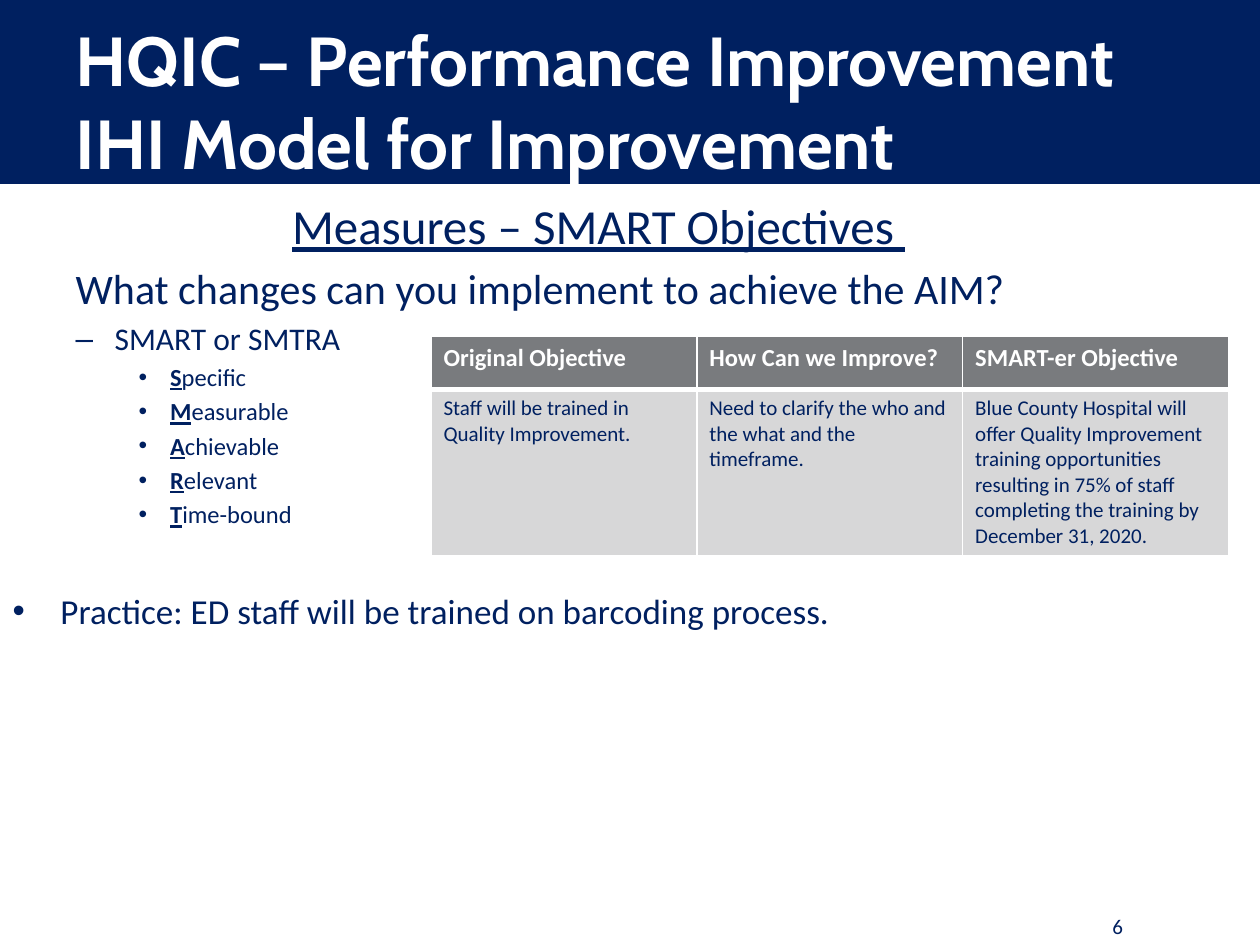
from dataclasses import dataclass

from lxml.etree import SubElement
from pptx import Presentation
from pptx.dml.color import RGBColor
from pptx.enum.shapes import MSO_SHAPE as Shape
from pptx.enum.text import MSO_ANCHOR as Anchor, MSO_AUTO_SIZE as AutoSize, PP_ALIGN as Align
from pptx.oxml import parse_xml
from pptx.oxml.ns import nsdecls, qn
from pptx.util import Inches, Pt


@dataclass(frozen=True)
class Theme:
    navy: RGBColor = RGBColor(0x00, 0x20, 0x60)
    white: RGBColor = RGBColor(0xFF, 0xFF, 0xFF)
    header_gray: RGBColor = RGBColor(0x79, 0x7B, 0x7E)
    row_gray: RGBColor = RGBColor(0xD7, 0xD7, 0xD8)
    title_font: str = "Cabin"
    text_font: str = "Calibri"
    title: float = 39.6
    heading: float = 28
    question: float = 24
    practice: float = 20
    method: float = 18
    small: float = 14
    tiny: float = 12


theme = Theme()


def write(paragraph, text, size, color=theme.navy, font=theme.text_font, bold=False,
          underline=False, align=Align.LEFT, level=0, margin=0, hanging=0, bullet=None,
          lead="", space_before=None):
    """Fill a paragraph; lead is an opening piece in bold underlined type."""
    paragraph.alignment = align
    paragraph.level = level
    properties = paragraph._p.get_or_add_pPr()
    properties.set("marL", str(Inches(margin)))
    properties.set("indent", str(Inches(-hanging)))
    if bullet:
        SubElement(properties, qn("a:buFont"), typeface="Arial")
        SubElement(properties, qn("a:buChar"), char=bullet)
    else:
        SubElement(properties, qn("a:buNone"))
    if space_before is not None:
        paragraph.space_before = Pt(space_before)
    for piece, emphasis in ((lead, True), (text, False)):
        if not piece:
            continue
        for number, line in enumerate(piece.split("\n")):
            if number:
                paragraph.add_line_break()
            run = paragraph.add_run()
            run.text = line
            run.font.name = font
            run.font.size = Pt(size)
            run.font.color.rgb = color
            run.font.bold = bold or emphasis
            run.font.underline = underline or emphasis


def set_borders(cell, **widths):
    """Draw white cell borders; keys are L, R, T and B, values are points."""
    properties = cell._tc.get_or_add_tcPr()
    for index, (side, width) in enumerate(widths.items()):
        properties.insert(index, parse_xml(
            f'<a:ln{side} {nsdecls("a")} w="{Pt(width)}"><a:solidFill>'
            f'<a:srgbClr val="{theme.white}"/></a:solidFill></a:ln{side}>'))


presentation = Presentation()
presentation.slide_width = Inches(10)
presentation.slide_height = Inches(7.5)
slide = presentation.slides.add_slide(presentation.slide_layouts[1])
title, body = slide.placeholders

# Title band, placed behind the placeholders
band = slide.shapes.add_shape(Shape.RECTANGLE, 0, 0, Inches(10), Inches(1.46))
band.shadow.inherit = False
band.fill.solid()
band.fill.fore_color.rgb = theme.navy
band.line.fill.background()
title._element.addprevious(band._element)

title.left, title.top, title.width, title.height = map(Inches, (0.5, 0.17, 9, 1.25))
title.text_frame.auto_size = AutoSize.NONE
title.text_frame.vertical_anchor = Anchor.MIDDLE
write(title.text_frame.paragraphs[0],
      "HQIC – Performance Improvement\nIHI Model for Improvement",
      theme.title, color=theme.white, font=theme.title_font, bold=True)

# Body list
body.left, body.top, body.width, body.height = map(Inches, (0, 1.5, 9.5, 5.2))
frame = body.text_frame
frame.auto_size = AutoSize.NONE
write(frame.paragraphs[0], "Measures – SMART Objectives ", theme.heading,
      underline=True, align=Align.CENTER, space_before=0)
write(frame.add_paragraph(), "What changes can you implement to achieve the AIM?",
      theme.question, level=1, margin=0.5)
write(frame.add_paragraph(), "SMART or SMTRA", theme.method,
      level=1, margin=0.81, hanging=0.31, bullet="–")
for word in ("Specific", "Measurable", "Achievable", "Relevant", "Time-bound"):
    write(frame.add_paragraph(), word[1:], theme.small, lead=word[0],
          level=2, margin=1.25, hanging=0.25, bullet="•")
write(frame.add_paragraph(), "Practice: ED staff will be trained on barcoding process.",
      theme.practice, margin=0.38, hanging=0.38, bullet="•", space_before=35)

# Objectives table
rows = [
    ("Original Objective", "How Can we Improve?", "SMART-er Objective"),
    ("Staff will be trained in Quality Improvement.",
     "Need to clarify the who and the what and the timeframe.",
     "Blue County Hospital will offer Quality Improvement training opportunities "
     "resulting in 75% of staff completing the training by December 31, 2020."),
]
table = slide.shapes.add_table(2, 3, Inches(3.42), Inches(2.67),
                               Inches(6.33), Inches(1.72)).table
table.horz_banding = False
for row, height in zip(table.rows, (0.42, 1.3)):
    row.height = Inches(height)
for row_index, texts in enumerate(rows):
    header = row_index == 0
    for column_index, text in enumerate(texts):
        cell = table.cell(row_index, column_index)
        cell.fill.solid()
        cell.fill.fore_color.rgb = theme.header_gray if header else theme.row_gray
        set_borders(cell, L=1, R=1, T=1 if header else 3, B=3 if header else 1)
        write(cell.text_frame.paragraphs[0], text,
              theme.small if header else theme.tiny,
              color=theme.white if header else theme.navy, bold=header)

# Page number
page_number = slide.shapes.add_textbox(Inches(8.58), Inches(7.2), Inches(0.58), Inches(0.3))
page_number.text_frame.word_wrap = True
page_number.text_frame.vertical_anchor = Anchor.MIDDLE
write(page_number.text_frame.paragraphs[0], "6", theme.tiny, align=Align.CENTER)

presentation.save("out.pptx")
